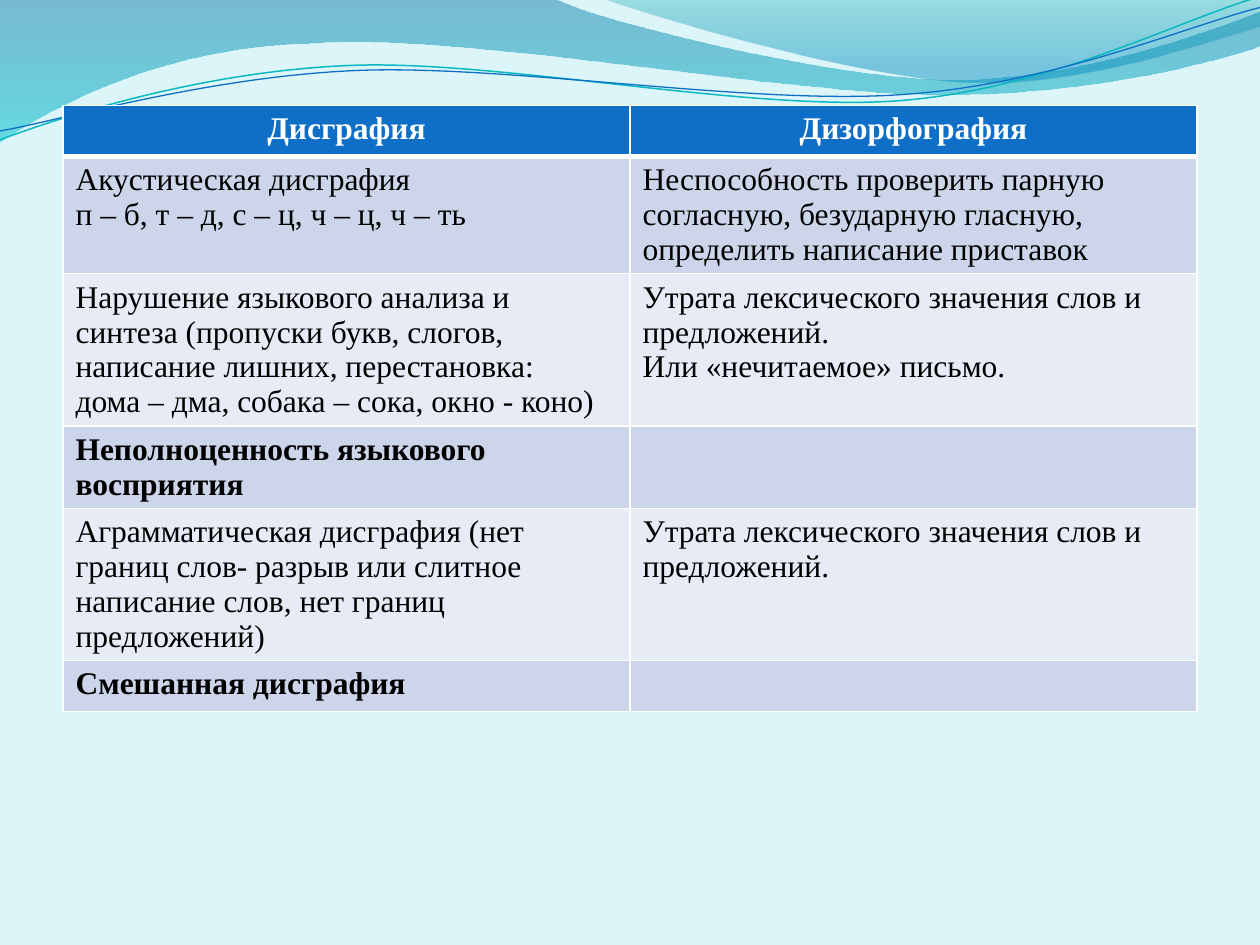
from math import cos, radians, sin

from lxml import etree
from pptx import Presentation
from pptx.dml.color import RGBColor
from pptx.enum.text import PP_ALIGN
from pptx.oxml import parse_xml
from pptx.oxml.ns import nsdecls, qn
from pptx.util import Inches, Pt

CENTER, LEFT = PP_ALIGN.CENTER, PP_ALIGN.LEFT
WHITE = RGBColor(0xFF, 0xFF, 0xFF)
BLACK = RGBColor(0x00, 0x00, 0x00)
PALE_AQUA = RGBColor(0xDB, 0xF5, 0xF9)
BLUE = RGBColor(0x0F, 0x6F, 0xC6)
TEAL = RGBColor(0x0A, 0xB8, 0xBF)
BANDS = (RGBColor(0xE7, 0xEB, 0xF5), RGBColor(0xCC, 0xD5, 0xEA))
DEEP_BLUE = RGBColor(0x00, 0x74, 0xA1)
CYAN = RGBColor(0x00, 0xC6, 0xCF)
DEEP_TEAL = RGBColor(0x00, 0xA1, 0xA9)
SKY = RGBColor(0x00, 0x8B, 0xBF)
FONT = "Times New Roman"
STRAND_TILT = -2.7

WAVES = [
    ([(0, 0), [(4.4, -0.01)],
      [(4.76, 0.17), (6.64, 0.63), (7.58, 0.63)],
      [(8.53, 0.63), (9.58, 0.26), (10, 0.09)], [(10.01, 0.36)],
      [(9.83, 0.44), (8.7, 0.76), (7.46, 0.75)],
      [(6.22, 0.75), (3.82, 0.28), (2.57, 0.34)],
      [(1.29, 0.36), (0.46, 0.83), (-0.01, 1.13)], [(0, 0)]],
     [(0, DEEP_BLUE, 45), (100, CYAN, 55)]),
    ([(4.79, -0.01),
      [(5.09, 0.11), (6.82, 0.62), (7.69, 0.65)],
      [(8.56, 0.69), (9.61, 0.32), (10, 0.21)], [(10, 0)], [(4.79, -0.01)]],
     [(0, DEEP_TEAL, 30), (80, SKY, 45)]),
]
STRANDS = [
    ([(0, 1.11), [(0.48, 0.93), (1.58, 0.57), (2.77, 0.52)],
      [(3.95, 0.47), (5.93, 0.89), (7.13, 0.8)],
      [(8.33, 0.71), (9.38, 0.15), (9.98, -0.02)]], TEAL, 0.85),
    ([(0, 1.04), [(0.47, 0.96), (1.64, 0.61), (2.83, 0.56)],
      [(4.03, 0.51), (5.97, 0.84), (7.17, 0.75)],
      [(8.36, 0.67), (9.41, 0.21), (10, 0.06)]], BLUE, 0.75),
]
ROWS = [
    ("Дисграфия", "Дизорфография"),
    ("Акустическая дисграфия\nп – б, т – д, с – ц, ч – ц, ч – ть",
     "Неспособность проверить парную согласную, безударную гласную, "
     "определить написание приставок"),
    ("Нарушение языкового анализа и синтеза (пропуски букв, слогов, "
     "написание лишних, перестановка:\nдома – дма, собака – сока, окно - коно)",
     "Утрата лексического значения слов и предложений.\nИли «нечитаемое» письмо."),
    ("Неполноценность языкового восприятия", ""),
    ("Аграмматическая дисграфия (нет границ слов- разрыв или слитное "
     "написание слов, нет границ предложений)",
     "Утрата лексического значения слов и предложений."),
    ("Смешанная дисграфия", ""),
]
BOLD_ROWS = (0, 3, 5)


def turn(point, pivot, degrees):
    """Turn a point clockwise about a pivot."""
    angle = radians(degrees)
    x, y = point[0] - pivot[0], point[1] - pivot[1]
    return (pivot[0] + x * cos(angle) - y * sin(angle),
            pivot[1] + x * sin(angle) + y * cos(angle))


def add_outline(page, outline, close):
    """Draw a freeform of lines and Bézier curves without shadow."""
    start, *segments = outline
    knots = [(Inches(x), Inches(y)) for x, y in [start] + [part[-1] for part in segments]]
    builder = page.shapes.build_freeform(*knots[0])
    builder.add_line_segments(knots[1:], close=close)
    shape = builder.convert_to_shape()
    shape.shadow.inherit = False
    for line, segment in zip(list(shape.element.iter(qn("a:lnTo"))), segments):
        if len(segment) == 3:
            line.tag = qn("a:cubicBezTo")
            for index, (x, y) in enumerate(segment[:2]):
                control = etree.Element(qn("a:pt"), x=str(Inches(x) - shape.left),
                                        y=str(Inches(y) - shape.top))
                line.insert(index, control)
    return shape


def add_wave(page, outline, stops):
    """Draw a closed wave with a translucent vertical gradient."""
    shape = add_outline(page, outline, True)
    shape.line.fill.background()
    stop_xml = "".join(
        f'<a:gs pos="{place * 1000}"><a:srgbClr val="{color}">'
        f'<a:alpha val="{alpha * 1000}"/></a:srgbClr></a:gs>'
        for place, color, alpha in stops)
    gradient = parse_xml(
        f'<a:gradFill {nsdecls("a")} rotWithShape="1"><a:gsLst>{stop_xml}</a:gsLst>'
        '<a:lin ang="5400000" scaled="0"/></a:gradFill>')
    shape.element.spPr.find(qn("a:custGeom")).addnext(gradient)


def add_strand(page, outline, color, width):
    """Draw an open curved line in a tilted frame."""
    start, *segments = outline
    pivot = [(a + b) / 2 for a, b in zip(start, segments[-1][-1])]
    level = [turn(start, pivot, -STRAND_TILT)]
    level += [[turn(point, pivot, -STRAND_TILT) for point in part] for part in segments]
    shape = add_outline(page, level, False)
    shape.rotation = STRAND_TILT
    shape.fill.background()
    shape.line.color.rgb = color
    shape.line.width = Pt(width)


def set_borders(cell, widths):
    """Give a cell white borders of the given widths in points."""
    properties = cell._tc.get_or_add_tcPr()
    for index, (side, width) in enumerate(widths.items()):
        border = etree.Element(qn(f"a:ln{side}"), w=str(Pt(width)))
        fill = etree.SubElement(border, qn("a:solidFill"))
        etree.SubElement(fill, qn("a:srgbClr"), val=str(WHITE))
        properties.insert(index, border)


def fill_cell(cell, text, row):
    """Write and format one table cell."""
    header = row == 0
    cell.fill.solid()
    cell.fill.fore_color.rgb = BLUE if header else BANDS[row % 2]
    if header:
        set_borders(cell, {"L": 1, "R": 1, "T": 1, "B": 3})
    if not text:
        return
    cell.text = text
    style = {"name": FONT, "size": Pt(18), "bold": row in BOLD_ROWS}
    for para in cell.text_frame.paragraphs:
        para.alignment = CENTER if header else LEFT
        for span in para.runs:
            for name, value in style.items():
                setattr(span.font, name, value)
            span.font.color.rgb = WHITE if header else BLACK


def add_comparison(page, width):
    """Add the two-column table of disorders."""
    frame = page.shapes.add_table(
        len(ROWS), 2, int(width * 0.05), Pt(60.2),
        int(width * 0.9), Pt(29.2) * len(ROWS))
    for row, texts in enumerate(ROWS):
        for column, text in enumerate(texts):
            fill_cell(frame.table.cell(row, column), text, row)


def main():
    """Build and save the deck."""
    deck = Presentation()
    deck.slide_width, deck.slide_height = Inches(10), Inches(7.5)
    page = deck.slides.add_slide(deck.slide_layouts[6])
    page.background.fill.solid()
    page.background.fill.fore_color.rgb = PALE_AQUA
    for wave in WAVES:
        add_wave(page, *wave)
    for strand in STRANDS:
        add_strand(page, *strand)
    add_comparison(page, deck.slide_width)
    deck.save("out.pptx")


if __name__ == "__main__":
    main()
